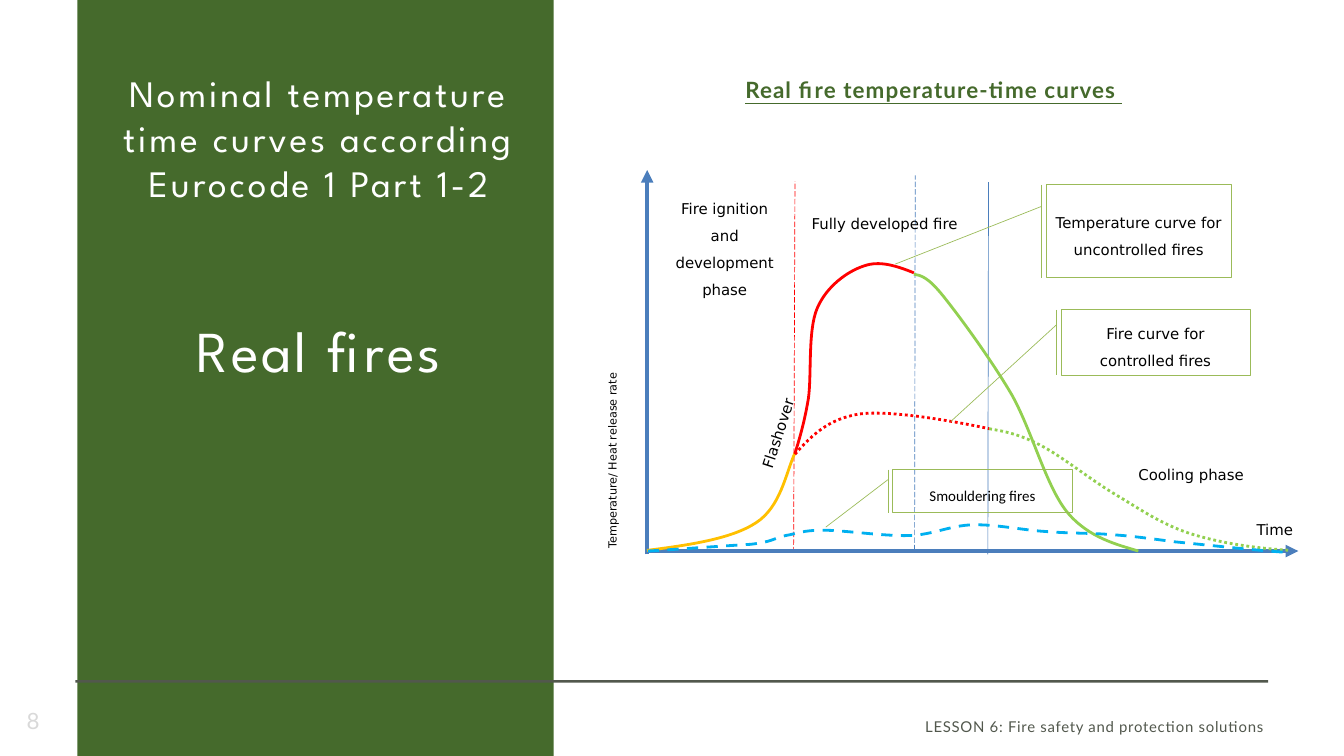
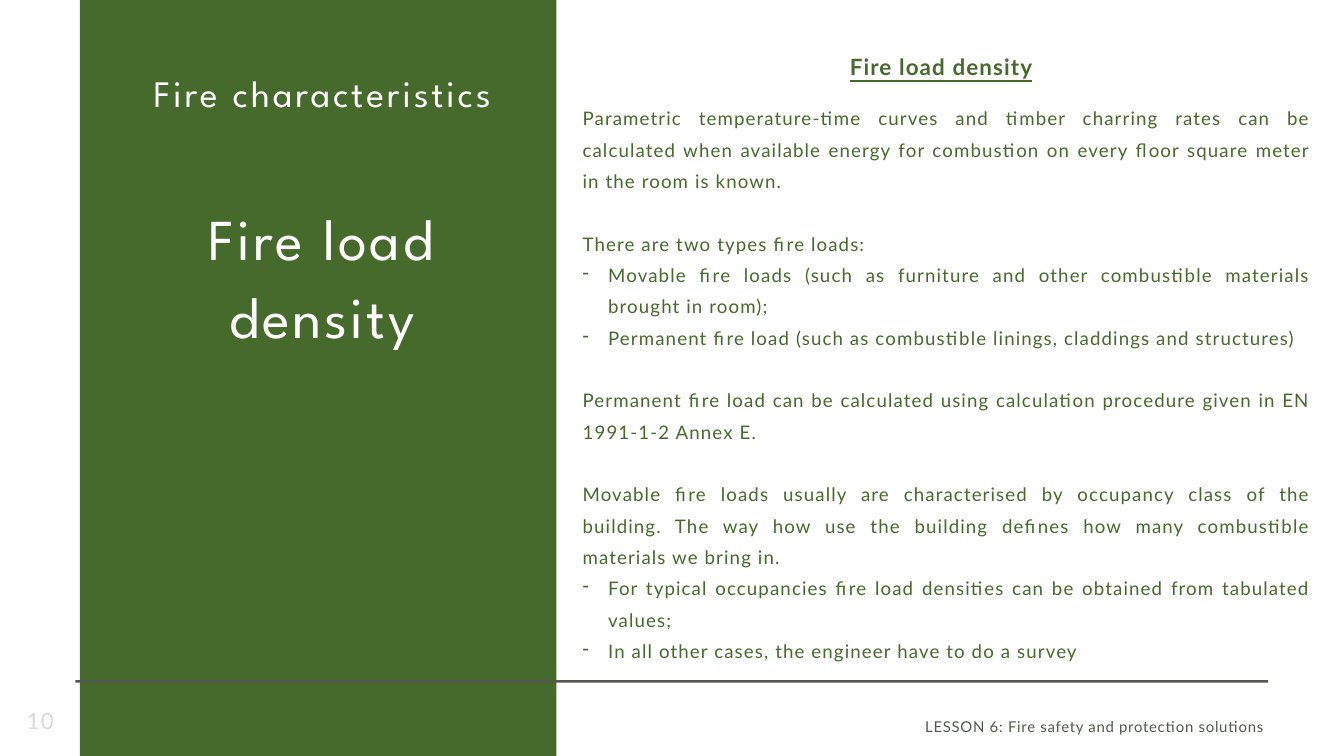
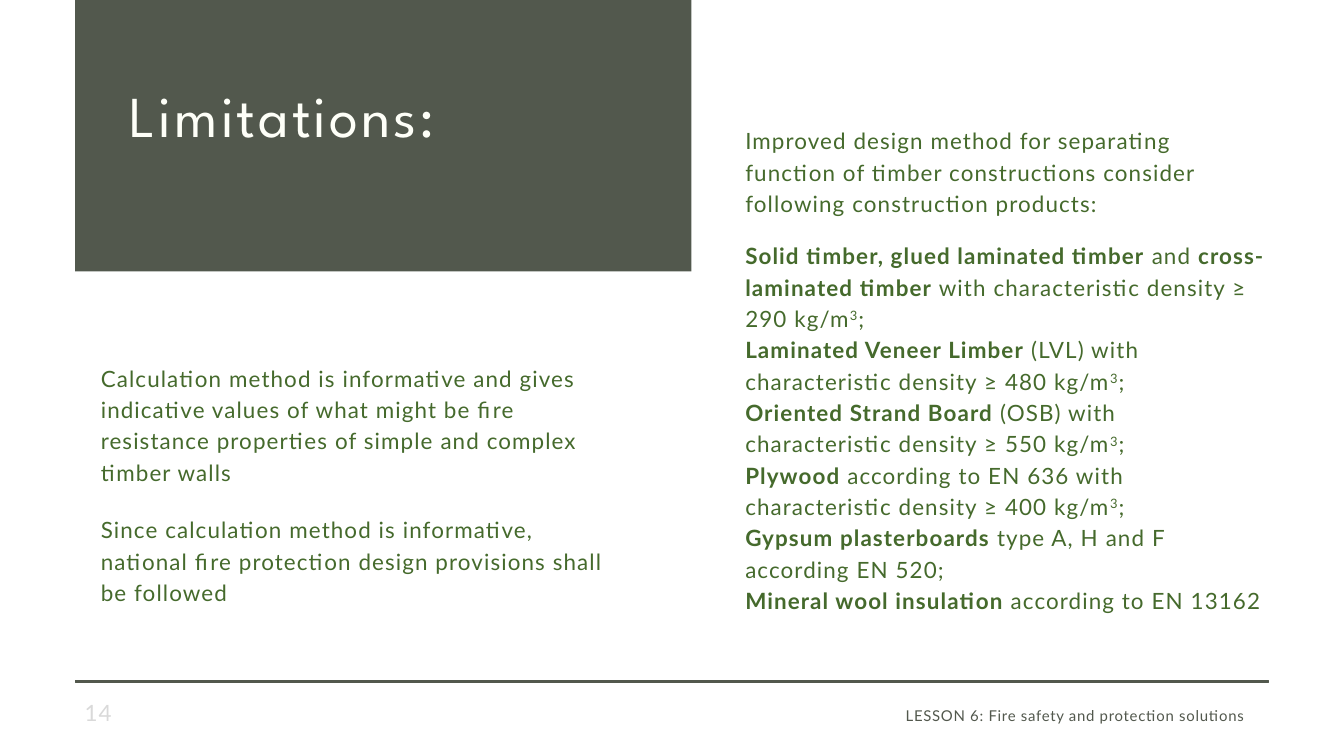
"""Builds three fire safety lesson slides: real fire curves, fire load density, limitations."""
from lxml.etree import SubElement
from pptx import Presentation
from pptx.dml.color import RGBColor
from pptx.enum.dml import MSO_LINE
from pptx.enum.shapes import MSO_CONNECTOR, MSO_SHAPE
from pptx.enum.text import MSO_ANCHOR, PP_ALIGN
from pptx.oxml.ns import qn
from pptx.util import Inches, Pt

HUES = {
    "green": "456A2C", "slate": "52584D", "white": "FFFFFF", "cream": "FEFFF8",
    "pale": "D9D9D9", "black": "000000", "blue": "4B7EBC", "red": "FF0000",
    "amber": "FFC000", "lime": "92D050", "sky": "00B0F0", "olive": "9BBB59",
}
HEAD, BODY, LABEL = "League Spartan", "Lato", "DejaVu Sans"
LEFT, MID, RIGHT, JUST = PP_ALIGN.LEFT, PP_ALIGN.CENTER, PP_ALIGN.RIGHT, PP_ALIGN.JUSTIFY


def write(shape, paras, size, hue, face=BODY, track=1.2, lead=Pt(33.6), align=LEFT, pad=0,
          anchor=MSO_ANCHOR.TOP):
    """Fill a shape with paragraphs, each a string or a list of (text, style) runs."""
    frame = shape.text_frame
    frame.word_wrap = True
    frame.vertical_anchor = anchor
    frame.margin_left = frame.margin_right = Inches(pad)
    frame.margin_top = frame.margin_bottom = Inches(pad / 2)
    for i, para in enumerate(paras):
        line = frame.paragraphs[0] if i == 0 else frame.add_paragraph()
        line.alignment = align
        line.line_spacing = lead
        font = line.font
        font.size, font.name = Pt(size), face
        font.color.rgb = RGBColor.from_string(HUES[hue])
        font._rPr.set("spc", str(round(track * 100)))
        for words, style in [(para, "")] if isinstance(para, str) else para:
            run = line.add_run()
            run.text = words
            if style == "bold":
                run.font.bold = True
            elif style == "super":
                run.font._rPr.set("baseline", "30000")
    return frame.paragraphs


def stroke(line, hue, width, dash=None):
    """Set colour, width and dash of a line."""
    line.color.rgb = RGBColor.from_string(HUES[hue])
    line.width = Pt(width)
    if dash:
        line.dash_style = dash


deck = Presentation()
deck.slide_width, deck.slide_height = Inches(20), Inches(11.25)

frames = [
    ("8", (1.15, 0, 7.09, 11.25), "green", (0.3, 10.52), (10.56, 10.64)),
    ("10", (1.19, 0, 7.09, 11.25), "green", (0.3, 10.52), (10.56, 10.64)),
    ("14", (1.12, 0, 9.17, 4.04), "slate", (1.16, 10.41), (10.27, 10.47)),
]
pages = []
for number, band, hue, spot, foot in frames:
    page = deck.slides.add_slide(deck.slide_layouts[6])
    pages.append(page.shapes)
    for box, tint in [(band, hue), ((1.12, 10.12, 17.75, 0.04), "slate")]:
        rule = page.shapes.add_shape(MSO_SHAPE.RECTANGLE, *map(Inches, box))
        rule.shadow.inherit = False
        rule.fill.solid()
        rule.fill.fore_color.rgb = RGBColor.from_string(HUES[tint])
        rule.line.fill.background()
    mark = page.shapes.add_textbox(*map(Inches, (*spot, 2.33, 0.4)))
    write(mark, [number], 24, "pale", lead=None, pad=0.1, anchor=MSO_ANCHOR.MIDDLE)
    note = page.shapes.add_textbox(*map(Inches, (*foot, 8.32, 0.29)))
    write(note, ["LESSON 6: Fire safety and protection solutions "], 16, "slate",
          track=0.8, lead=Pt(22.4), align=RIGHT)
rule.line.fill.solid()
stroke(rule.line, "slate", 0.75)
real, load, limits = pages

titles = [
    (real, (1.46, 1.05, 6.57, 5.35), "Nominal temperature time curves according Eurocode 1 Part 1-2",
     "Real fires", 108, (11.09, 1.06, 7.78, 0.44), "Real fire temperature-time curves ", LEFT),
    (load, (1.93, 1.05, 5.74, 4.85), "Fire characteristics",
     "Fire load density", 84, (9.67, 0.72, 8.67, 0.44), "Fire load density", MID),
]
for page, box, topic, name, space, spot, head, align in titles:
    title = page.add_textbox(*map(Inches, box))
    last = write(title, [topic, name], 40, "white", HEAD, 3.1, None, MID)[-1]
    last.font.size, last.line_spacing, last.space_before = Pt(62), Pt(83.7), Pt(space)
    top = write(page.add_textbox(*map(Inches, spot)), [head], 24, "green", align=align)[0]
    top.font.bold = top.font.underline = True

axes = [
    (11.81, 8.22, 11.83, 2.7, "red", 0.75, MSO_LINE.LONG_DASH),
    (14.7, 8.25, 14.71, 2.71, "blue", 0.75, None),
    (13.61, 8.19, 13.62, 2.61, "blue", 0.75, MSO_LINE.LONG_DASH),
    (9.63, 8.25, 9.63, 2.53, "blue", 4.5, None),
    (9.62, 8.2, 19.32, 8.2, "blue", 4.5, None),
]
for *ends, hue, width, dash in axes:
    axis = real.add_connector(MSO_CONNECTOR.STRAIGHT, *map(Inches, ends))
    stroke(axis.line, hue, width, dash)
    if width > 1:
        SubElement(axis.line._get_or_add_ln(), qn("a:tailEnd"), type="triangle")
    SubElement(axis._element.spPr, qn("a:effectLst"))

curves = [
    ("amber", None, [
        (9.63, 8.19), (10.26, 8.11), (10.88, 8.02), (11.25, 7.78),
        (11.62, 7.54), (11.69, 7.05), (11.83, 6.74)]),
    ("red", None, [
        (11.83, 6.75), (11.9, 6.52), (11.97, 6.29), (12.03, 5.93),
        (12.08, 5.58), (12.02, 4.92), (12.16, 4.59), (12.3, 4.26), (12.61, 4.04), (12.85, 3.96),
        (13.09, 3.87), (13.35, 3.96), (13.6, 4.06)]),
    ("lime", None, [
        (13.6, 4.08), (13.7, 4.1), (13.8, 4.11), (14.04, 4.41),
        (14.28, 4.71), (14.75, 5.35), (15.06, 5.88), (15.36, 6.42), (15.57, 7.24), (15.88, 7.62),
        (16.2, 8.01), (16.65, 8.11), (16.94, 8.2)]),
    ("red", MSO_LINE.ROUND_DOT, [
        (11.83, 6.76), (12.07, 6.49), (12.32, 6.23), (12.8, 6.16),
        (13.28, 6.1), (14.25, 6.28), (14.72, 6.38)]),
    ("lime", MSO_LINE.ROUND_DOT, [
        (14.72, 6.38), (14.95, 6.42), (15.17, 6.46), (15.49, 6.63),
        (15.8, 6.79), (16.23, 7.14), (16.6, 7.36), (16.97, 7.58), (17.28, 7.8), (17.71, 7.94),
        (18.15, 8.08), (18.68, 8.16), (19.2, 8.19)]),
    ("sky", MSO_LINE.DASH, [
        (9.64, 8.2), (10.15, 8.17), (10.66, 8.13), (11.17, 8.1),
        (11.51, 8.06), (11.51, 8.01), (11.69, 7.97), (11.87, 7.94), (11.94, 7.89), (12.25, 7.89),
        (12.55, 7.89), (13.15, 7.98), (13.52, 7.97), (13.89, 7.96), (14.13, 7.82), (14.47, 7.81),
        (14.82, 7.8), (15.22, 7.89), (15.57, 7.91), (15.93, 7.94), (16.28, 7.93), (16.59, 7.96),
        (16.91, 7.98), (17.45, 8.06), (17.45, 8.06), (17.88, 8.1), (18.76, 8.2), (19.17, 8.22)]),
]
for hue, dash, dots in curves:
    first, *rest = [(Inches(x), Inches(y)) for x, y in dots]
    pen = real.build_freeform(*first)
    pen.add_line_segments(rest, close=False)
    curve = pen.convert_to_shape()
    curve.shadow.inherit = False
    curve.fill.background()
    stroke(curve.line, hue, 3, dash)
    steps = list(curve._element.iter(qn("a:lnTo")))
    for i in range(0, len(steps), 3):
        steps[i].tag = qn("a:cubicBezTo")
        for step in steps[i + 1:i + 3]:
            steps[i].append(step[0])
            step.getparent().remove(step)

callouts = [
    ((15.57, 2.75, 2.75, 1.38), "Temperature curve for uncontrolled fires", LABEL, 0.855, -0.817),
    ((15.79, 4.61, 2.81, 0.97), "Fire curve for controlled fires", LABEL, 1.713, -0.584),
    ((13.28, 6.99, 2.68, 0.64), "Smouldering fires", "Calibri", 1.335, -0.37),
]
notes = []
for box, words, face, down, over in callouts:
    call = real.add_shape(MSO_SHAPE.LINE_CALLOUT_1_BORDER_AND_ACCENT_BAR, *map(Inches, box))
    call.shadow.inherit = False
    call.fill.background()
    stroke(call.line, "olive", 0.75)
    for i, value in enumerate([0.232, -0.025, down, over]):
        call.adjustments[i] = value
    notes.append((call, words, face, 16, MID, MSO_ANCHOR.MIDDLE))

labels = [
    ((8.86, 2.66, 0.69, 5.6), "Temperature/ Heat release rate", 12, JUST, MSO_ANCHOR.TOP),
    ((18.6, 7.57, 1, 0.42), "Time", 16, JUST, MSO_ANCHOR.TOP),
    ((9.82, 2.79, 1.93, 1.69), "Fire ignition and development phase", 16, MID, MSO_ANCHOR.MIDDLE),
    ((11.89, 2.74, 2.55, 1.03), "Fully developed fire", 16, MID, MSO_ANCHOR.MIDDLE),
    ((16.19, 6.74, 3.07, 0.65), "Cooling phase", 16, MID, MSO_ANCHOR.TOP),
    ((10.69, 6.11, 1.64, 0.64), "Flashover", 16, MID, MSO_ANCHOR.MIDDLE),
]
for box, words, size, align, anchor in labels:
    label = real.add_textbox(*map(Inches, box))
    if size == 12:
        label.text_frame._txBody.bodyPr.set("vert", "vert270")
    notes.append((label, words, LABEL, size, align, anchor))
label.rotation = 287.9

for shape, words, face, size, align, anchor in notes:
    line = write(shape, [words], size, "black", face, 0, 1.5, align, 0.1, anchor)[0]
    line.space_after = Pt(6)

facts = [
    ("", "Parametric temperature-time curves and timber charring rates can be calculated when "
     "available energy for combustion on every floor square meter in the room is known."),
    ("gap", "There are two types fire loads:"),
    ("-", "Movable fire loads (such as furniture and other combustible materials brought in room);"),
    ("-", "Permanent fire load (such as combustible linings, claddings and structures)"),
    ("gap", "Permanent fire load can be calculated using calculation procedure given in "
     "EN 1991-1-2 Annex E."),
    ("gap", "Movable fire loads usually are characterised by occupancy class of the building. "
     "The way how use the building defines how many combustible materials we bring in."),
    ("-", "For typical occupancies fire load densities can be obtained from tabulated values;"),
    ("-", "In all other cases, the engineer have to do a survey"),
]
body = load.add_textbox(*map(Inches, (8.67, 1.46, 10.83, 8.53)))
lines = write(body, [words for kind, words in facts], 20, "green", align=JUST)
for line, (kind, words) in zip(lines, facts):
    if kind == "gap":
        line.space_before = Pt(33.6)
    elif kind == "-":
        props = line._p.get_or_add_pPr()
        props.set("marL", str(Inches(0.38)))
        props.set("indent", str(Inches(-0.38)))
        bullet = SubElement(props, qn("a:buChar"), char="-")
        props.find(qn("a:defRPr")).addprevious(bullet)

title = limits.add_textbox(*map(Inches, (1.93, 1.05, 7.56, 1.18)))
write(title, ["Limitations:"], 62, "cream", HEAD, 3.1, Pt(83.7))

cube = [("3", "super"), (";", "")]
goods = [
    [("Solid timber, glued laminated timber", "bold"), (" and ", ""),
     ("cross-laminated timber", "bold"), (" with characteristic density ≥ 290 kg/m", ""), *cube],
    [("Laminated Veneer Limber", "bold"),
     (" (LVL) with characteristic density ≥ 480 kg/m", ""), *cube],
    [("Oriented Strand Board", "bold"),
     (" (OSB) with characteristic density ≥ 550 kg/m", ""), *cube],
    [("Plywood", "bold"),
     (" according to EN 636 with characteristic density ≥ 400 kg/m", ""), *cube],
    [("Gypsum plasterboards", "bold"), (" type A, H and F according EN 520;", "")],
    [("Mineral wool insulation", "bold"), (" according to EN 13162", "")],
]
blocks = [
    ((11.09, 1.83, 7.78, 1.4), ["Improved design method for separating function of timber "
                                "constructions consider following construction products:"]),
    ((11.09, 3.54, 7.78, 5.69), goods),
    ((1.5, 5.36, 7.78, 1.87), ["Calculation method is informative and gives indicative values of "
                               "what might be fire resistance properties of simple and complex "
                               "timber walls"]),
    ((1.5, 7.62, 7.78, 1.4), ["Since calculation method is informative, national fire protection "
                              "design provisions shall be followed"]),
]
for box, paras in blocks:
    write(limits.add_textbox(*map(Inches, box)), paras, 24, "green")

deck.save("out.pptx")
